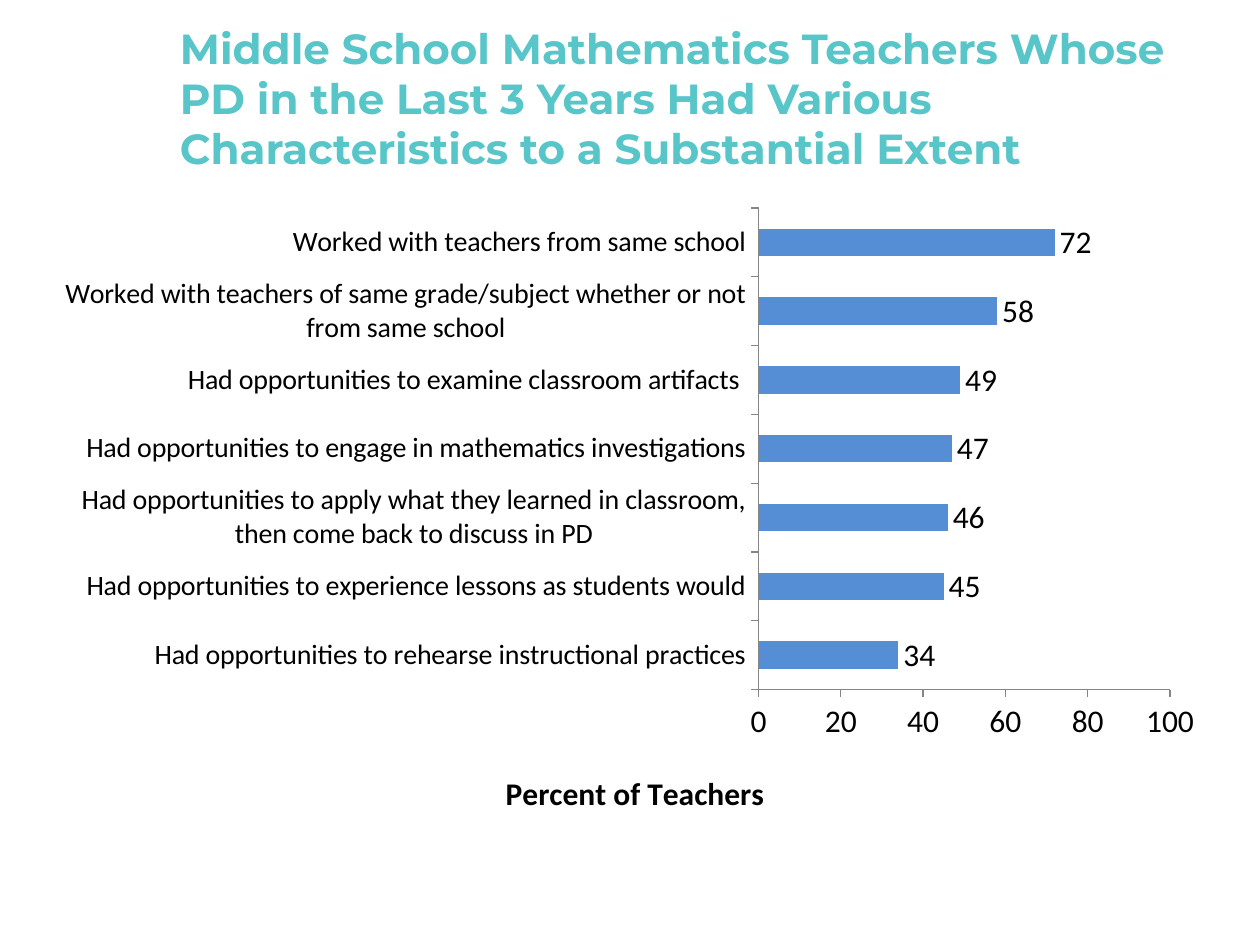
import pptx
import pptx.util
import pptx.chart.data
import pptx.dml.color
import pptx.enum.chart
import pptx.enum.text
import pptx.oxml
import pptx.oxml.ns
from dataclasses import dataclass

SCALE = 9144


@dataclass(frozen=True)
class Theme:
    teal: str = "58C5C9"
    blue: str = "558ED5"
    black: str = "000000"
    grey: str = "868686"
    head: str = "Montserrat"
    body: str = "Calibri"
    title: int = 24
    text: int = 18
    label: int = 16


THEME = Theme()

TITLE = (
    "Middle School Mathematics Teachers Whose PD in the Last 3 Years "
    "Had Various Characteristics to a Substantial Extent"
)

ROWS = [
    ("Had opportunities to rehearse instructional practices", 34),
    ("Had opportunities to experience lessons as students would", 45),
    ("Had opportunities to apply what they learned in classroom, "
     "then come back to discuss in PD", 46),
    ("Had opportunities to engage in mathematics investigations", 47),
    ("Had opportunities to examine classroom artifacts ", 49),
    ("Worked with teachers of same grade/subject whether or not "
     "from same school", 58),
    ("Worked with teachers from same school", 72),
]


def px(*sizes):
    return [pptx.util.Emu(size * SCALE) for size in sizes]


def style(font, face, size, color, bold=False):
    font.name = face
    font.size = pptx.util.Pt(size)
    font.bold = bold
    font.color.rgb = pptx.dml.color.RGBColor.from_string(color)


def place(node, index, **parts):
    for old in node.findall(pptx.oxml.ns.qn("c:layout")):
        node.remove(old)
    modes = {"target": "layoutTarget", "x": "x", "y": "y", "w": "w", "h": "h"}
    edges = "".join(f'<c:{key}Mode val="edge"/>' for key in "xy")
    sizes = "".join(
        f'<c:{modes[key]} val="{val}"/>' for key, val in parts.items() if key != "target"
    )
    target = '<c:layoutTarget val="inner"/>' if "target" in parts else ""
    node.insert(index, pptx.oxml.parse_xml(
        f'<c:layout {pptx.oxml.ns.nsdecls("c")}><c:manualLayout>'
        f"{target}{edges}{sizes}</c:manualLayout></c:layout>"
    ))


def add_title(slide, text, box):
    frame = slide.shapes.add_textbox(*px(*box)).text_frame
    frame.word_wrap = True
    frame.vertical_anchor = pptx.enum.text.MSO_ANCHOR.MIDDLE
    frame.text = text
    style(frame.paragraphs[0].runs[0].font, THEME.head, THEME.title, THEME.teal, True)


def set_axis(axis, size):
    axis.has_major_gridlines = False
    axis.major_tick_mark = pptx.enum.chart.XL_TICK_MARK.OUTSIDE
    axis.minor_tick_mark = pptx.enum.chart.XL_TICK_MARK.NONE
    axis.format.line.width = pptx.util.Pt(0.75)
    axis.format.line.color.rgb = pptx.dml.color.RGBColor.from_string(THEME.grey)
    style(axis.tick_labels.font, THEME.body, size, THEME.black)


def name_axis(axis, text):
    frame = axis.axis_title.text_frame
    frame.text = text
    style(frame.paragraphs[0].runs[0].font, THEME.body, THEME.text, THEME.black, True)
    node = frame._txBody.getparent().getparent().getparent()
    place(axis.axis_title._element, 1, x=0.39, y=0.9)
    return node


def add_bars(slide, rows, box):
    data = pptx.chart.data.CategoryChartData()
    data.categories = [name for name, _ in rows]
    data.add_series("Series 1", [value for _, value in rows])
    kind = pptx.enum.chart.XL_CHART_TYPE.BAR_CLUSTERED
    chart = slide.shapes.add_chart(kind, *px(*box), data).chart
    chart.has_legend = False
    chart.has_title = False
    style(chart.font, THEME.body, THEME.text, THEME.black)

    set_axis(chart.category_axis, THEME.label)
    scale = chart.value_axis
    set_axis(scale, THEME.text)
    scale.minimum_scale, scale.maximum_scale, scale.major_unit = 0, 100, 20
    name_axis(scale, "Percent of Teachers")

    plot = chart.plots[0]
    plot.gap_width = 150
    plot.vary_by_categories = False
    fill = plot.series[0].format.fill
    fill.solid()
    fill.fore_color.rgb = pptx.dml.color.RGBColor.from_string(THEME.blue)
    plot.has_data_labels = True
    labels = plot.data_labels
    labels.show_value = True
    labels.position = pptx.enum.chart.XL_LABEL_POSITION.OUTSIDE_END
    style(labels.font, THEME.body, THEME.text, THEME.black)
    area = chart._chartSpace.chart.plotArea
    place(area, 0, target="inner", x=0.61, y=0.02, w=0.35, h=0.76)


def main():
    deck = pptx.Presentation()
    deck.slide_width, deck.slide_height = px(1000, 750)
    slide = deck.slides.add_slide(deck.slide_layouts[6])
    add_bars(slide, ROWS, (33, 155, 933, 503))
    add_title(slide, TITLE, (133, 30, 817, 95))
    deck.save("out.pptx")


if __name__ == "__main__":
    main()
